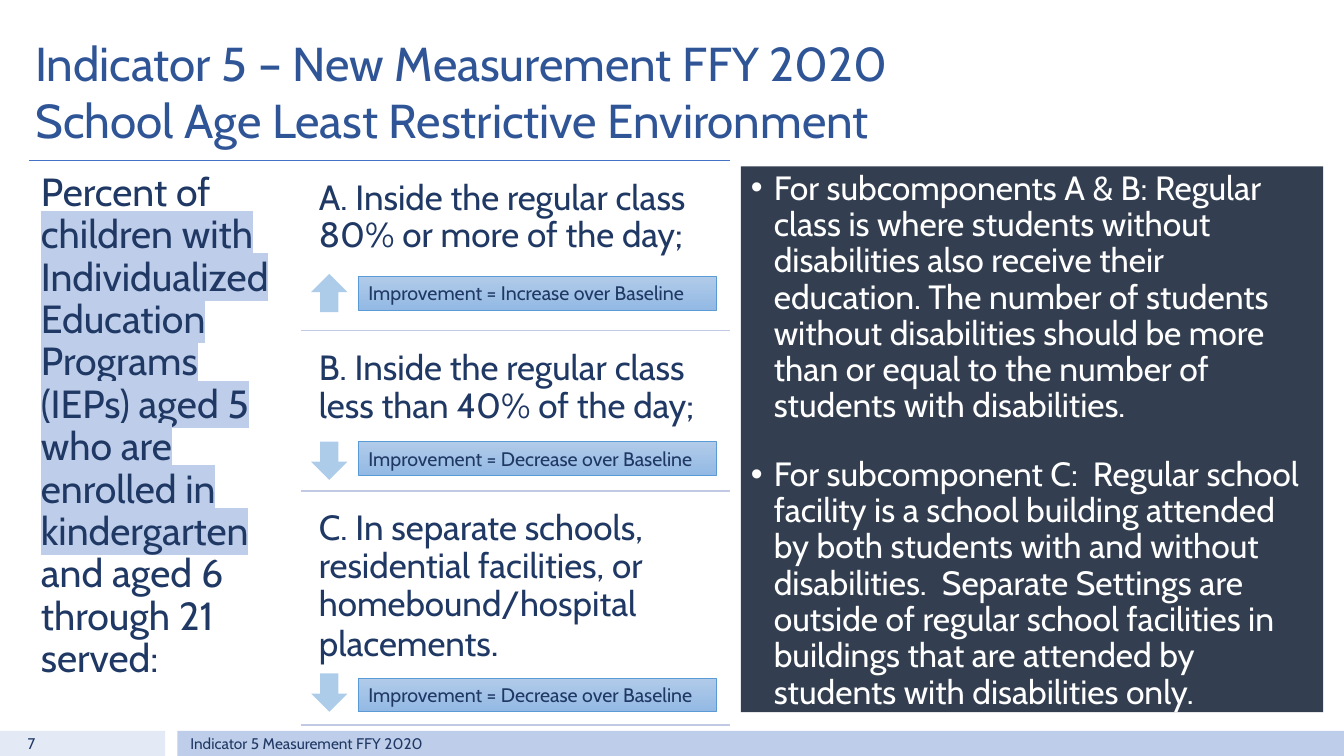
from dataclasses import dataclass

from lxml import etree
from pptx import Presentation
from pptx.dml.color import RGBColor
from pptx.enum import shapes, text
from pptx.oxml import ns
from pptx.util import Pt


@dataclass(frozen=True)
class Theme:
    font: str = "Cabin"
    title: str = "2F5597"
    ink: str = "1F3864"
    footer_ink: str = "203864"
    white: str = "FFFFFF"
    panel: str = "333F50"
    band_light: str = "E3EAF6"
    band: str = "BECEEA"
    rule: str = "4472C4"
    divider: str = "C1C9E4"
    accent: str = "5B9BD5"
    badge_top: str = "B1CBE9"
    badge_bottom: str = "93B9E4"
    title_size: int = 34
    lead_size: int = 28
    stop_size: int = 27
    section_size: int = 25
    note_size: int = 24
    badge_size: int = 14
    footer_size: int = 11


@dataclass(frozen=True)
class Area:
    left: float
    top: float
    width: float
    height: float

    def lengths(self) -> tuple:
        return Pt(self.left), Pt(self.top), Pt(self.width), Pt(self.height)


@dataclass(frozen=True)
class Span:
    words: str
    size: int
    colour: str
    highlight: str = ""


@dataclass(frozen=True)
class Section:
    spans: tuple
    top: float
    bottom: float
    arrow_top: float
    badge_top: float
    trend: str


THEME = Theme()
LEAD_TOP = 114.8
RIGHT_EDGE = 521.3


def section_span(words: str) -> Span:
    return Span(words, THEME.section_size, THEME.ink)


SECTIONS = (
    Section((section_span("A. Inside the regular class 80% or more of the day;"),),
            LEAD_TOP, 236, 195.6, 197.2, "Increase"),
    Section((section_span("B. Inside the regular class less than 40% of the day;"),),
            236.3, 350.6, 315.4, 315.4, "Decrease"),
    Section((section_span("C. In separate schools, residential facilities, or "
                          "homebound/hospital placements"),
             Span(".", THEME.stop_size, THEME.ink)),
            350.8, 517.9, 481, 484.2, "Decrease"),
)
NOTES = (
    "For subcomponents A & B: Regular class is where students without disabilities also "
    "receive their education. The number of students without disabilities should be more "
    "than or equal to the number of students with disabilities.",
    "For subcomponent C:  Regular school facility is a school building attended by both "
    "students with and without disabilities.  Separate Settings are outside of regular "
    "school facilities in buildings that are attended by students with disabilities only.",
)
LEAD = (
    Span("Percent of ", THEME.lead_size, THEME.ink),
    Span("children with Individualized Education Programs (IEPs) aged 5 who are enrolled "
         "in kindergarten ", THEME.lead_size, THEME.ink, THEME.band),
    Span("and aged 6 through 21 served:", THEME.lead_size, THEME.ink),
)


def apply(target, **formats) -> None:
    for name, value in formats.items():
        setattr(target, name, value)


def rgb(colour: str) -> RGBColor:
    return RGBColor.from_string(colour)


def write(para, spans: tuple, **formats) -> None:
    """Format the paragraph and add its spans; a newline in a span breaks the line."""
    apply(para, **formats)
    for span in spans:
        for index, words in enumerate(span.words.split("\n")):
            if index:
                para.add_line_break()
            run = para.add_run()
            run.text = words
            apply(run.font, name=THEME.font, size=Pt(span.size))
            run.font.color.rgb = rgb(span.colour)
            if span.highlight:
                mark = etree.Element(ns.qn("a:highlight"))
                etree.SubElement(mark, ns.qn("a:srgbClr"), val=span.highlight)
                run.font._element.find(ns.qn("a:solidFill")).addnext(mark)


def set_frame(frame, anchor=text.MSO_ANCHOR.TOP, inset: float = 0) -> None:
    apply(frame, word_wrap=True, auto_size=text.MSO_AUTO_SIZE.NONE, vertical_anchor=anchor)
    if inset:
        apply(frame, margin_left=Pt(inset), margin_right=Pt(inset),
              margin_top=Pt(inset), margin_bottom=Pt(inset))


def add_text(page, area: Area, spans: tuple, anchor=text.MSO_ANCHOR.TOP,
             inset: float = 0, **formats) -> None:
    box = page.shapes.add_textbox(*area.lengths())
    set_frame(box.text_frame, anchor, inset)
    write(box.text_frame.paragraphs[0], spans, **formats)


def add_block(page, kind, area: Area, colour: str):
    shape = page.shapes.add_shape(kind, *area.lengths())
    shape.shadow.inherit = False
    shape.fill.solid()
    shape.fill.fore_color.rgb = rgb(colour)
    shape.line.fill.background()
    return shape


def add_rule(page, left: float, top: float, colour: str) -> None:
    rule = page.shapes.add_connector(shapes.MSO_CONNECTOR.STRAIGHT,
                                     Pt(left), Pt(top), Pt(RIGHT_EDGE), Pt(top))
    rule.line.width = Pt(1)
    rule.line.color.rgb = rgb(colour)
    etree.SubElement(rule._element.spPr, ns.qn("a:effectLst"))


def add_title(page) -> None:
    title = page.shapes.title
    left, top, width, height = Area(18, 16.6, 761, 92.9).lengths()
    apply(title, left=left, top=top, width=width, height=height)
    set_frame(title.text_frame, text.MSO_ANCHOR.BOTTOM)
    write(title.text_frame.paragraphs[0],
          (Span("Indicator 5 – New Measurement FFY 2020\n"
                "School Age Least Restrictive Environment", THEME.title_size, THEME.title),),
          alignment=text.PP_ALIGN.LEFT)


def add_badge(page, section: Section) -> None:
    """Draw the trend arrow and the improvement label beside it."""
    arrow = add_block(page, shapes.MSO_SHAPE.UP_ARROW,
                      Area(222.2, section.arrow_top, 26, 27.4), THEME.accent)
    arrow.rotation = 0 if section.trend == "Increase" else 180
    tint = arrow._element.spPr.find(".//" + ns.qn("a:srgbClr"))
    etree.SubElement(tint, ns.qn("a:alpha"), val="50000")

    badge = add_block(page, shapes.MSO_SHAPE.RECTANGLE,
                      Area(256, section.badge_top, 255.6, 24.2), THEME.badge_top)
    badge.fill.gradient()
    badge.fill.gradient_angle = 270
    for stop, colour in zip(badge.fill.gradient_stops, (THEME.badge_top, THEME.badge_bottom)):
        stop.color.rgb = rgb(colour)
    badge.line.color.rgb = rgb(THEME.accent)
    badge.line.width = Pt(0.5)
    set_frame(badge.text_frame)
    write(badge.text_frame.paragraphs[0],
          (Span(f"Improvement = {section.trend} over Baseline", THEME.badge_size, THEME.ink),),
          alignment=text.PP_ALIGN.LEFT)


def add_notes(page) -> None:
    panel = add_block(page, shapes.MSO_SHAPE.RECTANGLE,
                      Area(529.2, 118.8, 416, 390), THEME.panel)
    frame = panel.text_frame
    set_frame(frame)
    for index, note in enumerate(NOTES):
        para = frame.add_paragraph() if index else frame.paragraphs[0]
        settings = para._p.get_or_add_pPr()
        settings.set("marL", str(Pt(16.5)))
        settings.set("indent", str(-Pt(16.5)))
        etree.SubElement(settings, ns.qn("a:buFont"), typeface="Arial")
        etree.SubElement(settings, ns.qn("a:buChar"), char="•")
        write(para, (Span(note, THEME.note_size, THEME.white),),
              alignment=text.PP_ALIGN.LEFT, line_spacing=0.9,
              space_before=Pt(11 if index else 0), space_after=Pt(0 if index else 12))


def add_footer(page) -> None:
    for left, width, colour in ((0, 118, THEME.band_light), (126.7, 833.3, THEME.band)):
        add_block(page, shapes.MSO_SHAPE.RECTANGLE, Area(left, 522, width, 18), colour)
    for words, left, width, alignment in (
            ("7", 0, 32.4, text.PP_ALIGN.RIGHT),
            ("Indicator 5 Measurement FFY 2020", 128.9, 720, text.PP_ALIGN.LEFT)):
        add_text(page, Area(left, 522, width, 18),
                 (Span(words, THEME.footer_size, THEME.footer_ink),),
                 text.MSO_ANCHOR.MIDDLE, alignment=alignment)


def main() -> None:
    deck = Presentation()
    apply(deck, slide_width=Pt(960), slide_height=Pt(540))
    page = deck.slides.add_slide(deck.slide_layouts[5])
    add_title(page)
    add_rule(page, 20.7, LEAD_TOP, THEME.rule)
    add_text(page, Area(20.7, LEAD_TOP, 194.4, 410), LEAD, inset=8.6, line_spacing=0.9)
    for section in SECTIONS:
        add_text(page, Area(220.7, section.top + 6.5, 301, section.bottom - section.top - 6.5),
                 section.spans, inset=7.2, line_spacing=0.9)
        add_rule(page, 214.9, section.bottom, THEME.divider)
        add_badge(page, section)
    add_notes(page)
    add_footer(page)
    deck.save("out.pptx")


if __name__ == "__main__":
    main()
